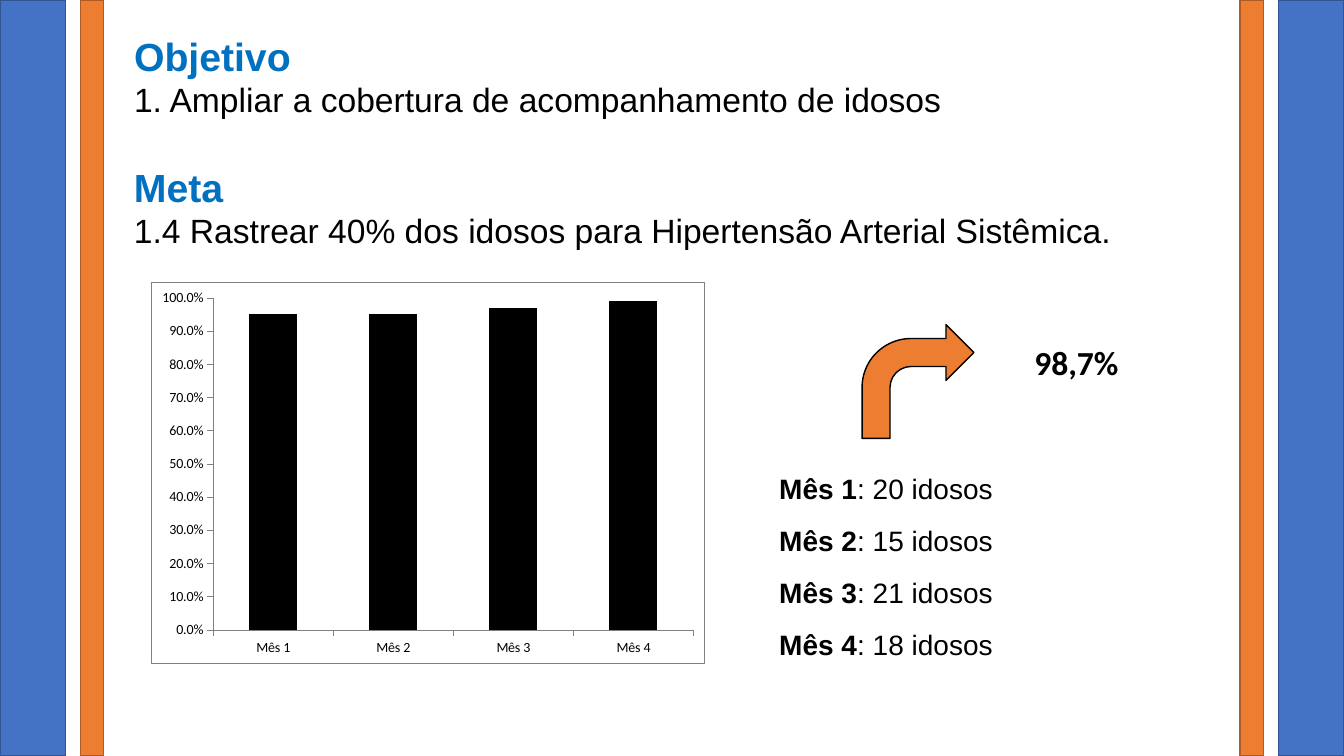
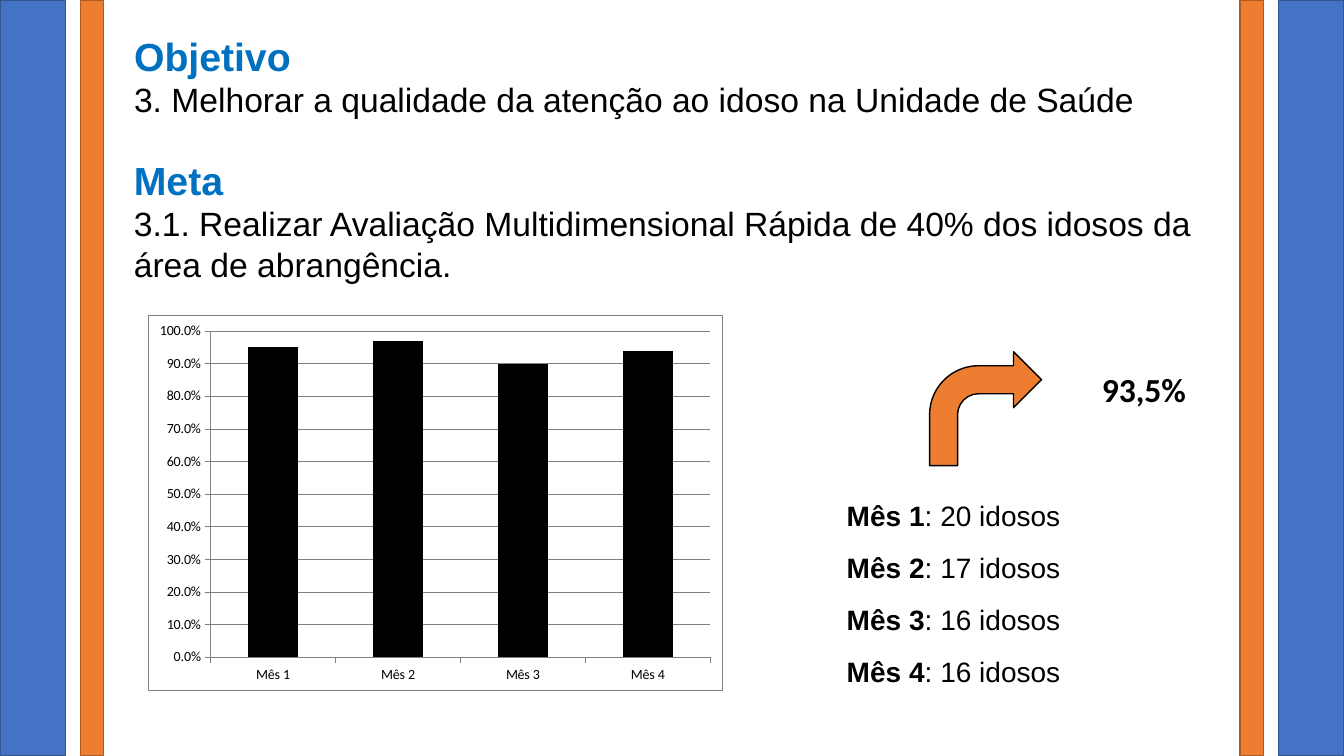
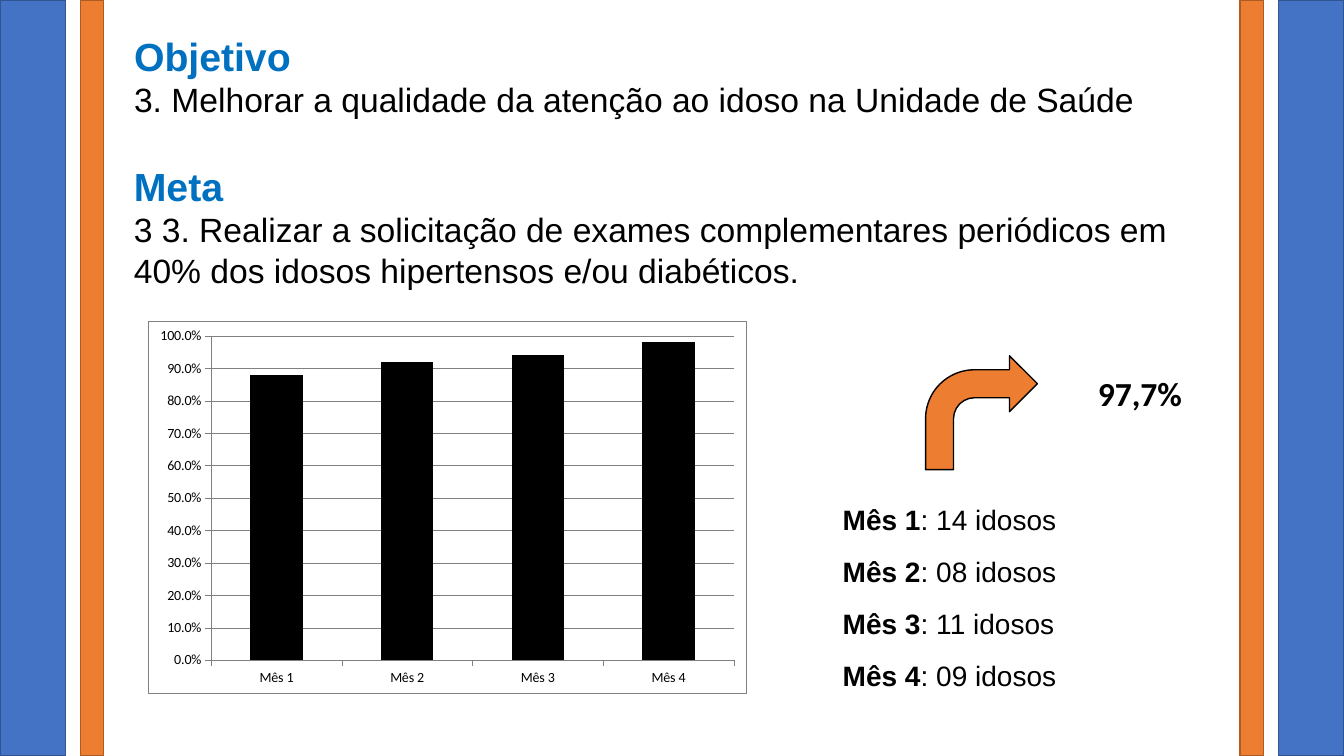
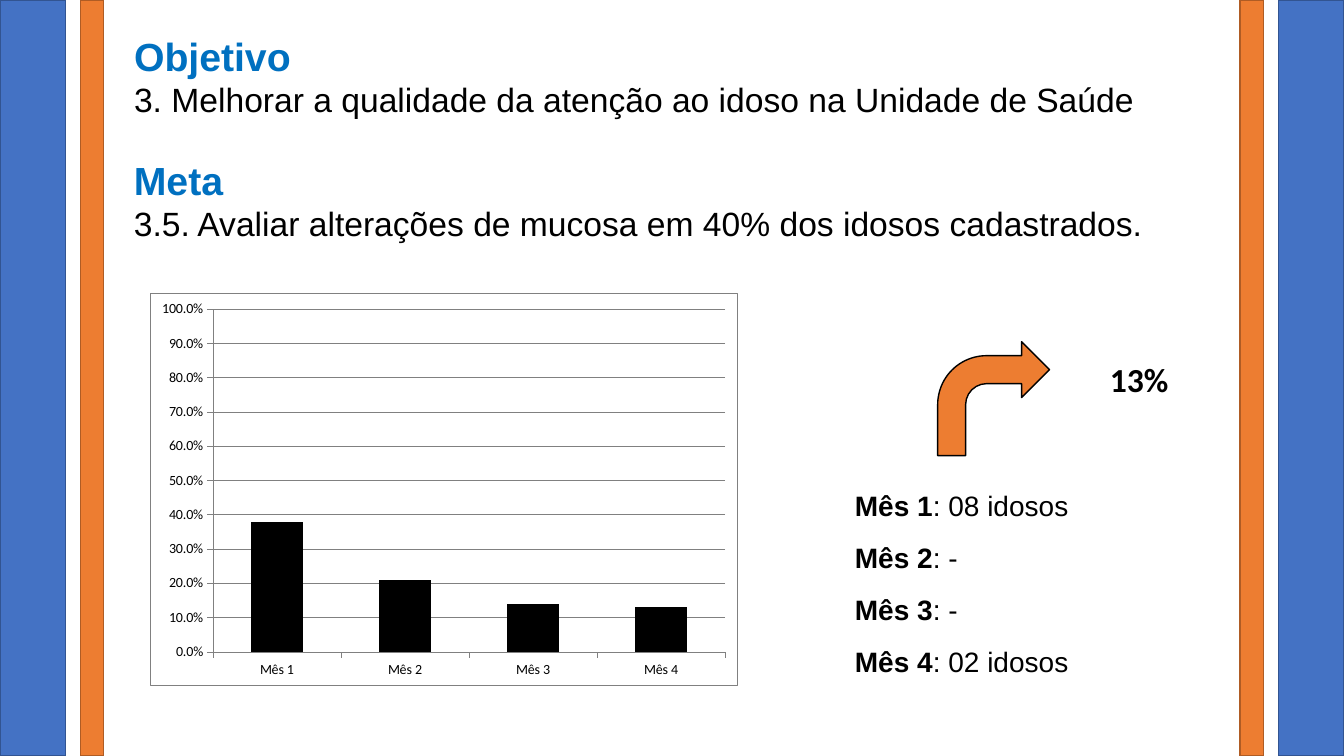
"""Build four slides on goals for elderly care, each with a chart and monthly counts."""
from dataclasses import dataclass

from pptx import Presentation
from pptx import util as u
from pptx.chart import data as chart_data
from pptx.dml import color
from pptx.enum import chart as chart_enum, shapes, text
from pptx.oxml import parse_xml

WIDTH, HEIGHT = 13.33, 7.5
BLUE, BLUE_EDGE = "4472C4", "325491"
ORANGE, ORANGE_EDGE = "ED7D31", "AF5C24"
HEADING, BLACK, WHITE, GRAY = "0070C0", "000000", "FFFFFF", "808080"
BODY_FONT, FIGURE_FONT = "Arial", "Calibri"
TEXT_LEFT, TEXT_WIDTH = 1.23, 10.9
BANDS = [(0, 0.65, BLUE, BLUE_EDGE), (0.8, 0.23, ORANGE, ORANGE_EDGE)]
MONTHS = ["Mês 1", "Mês 2", "Mês 3", "Mês 4"]
CHART_NS = "http://schemas.openxmlformats.org/drawingml/2006/chart"
DRAWING_NS = "http://schemas.openxmlformats.org/drawingml/2006/main"
QUALITY = "3. Melhorar a qualidade da atenção ao idoso na Unidade de Saúde"


@dataclass
class Goal:
    """Content and placement of one goal slide."""
    objective: str
    target: str
    target_place: tuple
    chart_place: tuple
    values: list
    result: str
    counts: list
    counts_at: tuple
    grid: bool = True


GOALS = [
    Goal("1. Ampliar a cobertura de acompanhamento de idosos",
         "1.4 Rastrear 40% dos idosos para Hipertensão Arterial Sistêmica.",
         (TEXT_LEFT, 1.57, 10.11, 0.98), (1.5, 2.8, 5.49, 3.78),
         [0.95, 0.95, 0.97, 0.99], "98,7%",
         ["20 idosos", "15 idosos", "21 idosos", "18 idosos"], (7.63, 4.63), grid=False),
    Goal(QUALITY,
         "3.1. Realizar Avaliação Multidimensional Rápida de 40% dos idosos da "
         "área de abrangência.",
         (TEXT_LEFT, 1.5, TEXT_WIDTH, 1.38), (1.47, 3.13, 5.69, 3.72),
         [0.95, 0.97, 0.9, 0.94], "93,5%",
         ["20 idosos", "17 idosos", "16 idosos", "16 idosos"], (8.3, 4.9)),
    Goal(QUALITY,
         "3 3. Realizar a solicitação de exames complementares periódicos em "
         "40% dos idosos hipertensos e/ou diabéticos.",
         (TEXT_LEFT, 1.56, TEXT_WIDTH, 1.38), (1.47, 3.18, 5.93, 3.7),
         [0.88, 0.92, 0.94, 0.98], "97,7%",
         ["14 idosos", "08 idosos", "11 idosos", "09 idosos"], (8.26, 4.94)),
    Goal(QUALITY,
         "3.5. Avaliar alterações de mucosa em 40% dos idosos cadastrados.",
         (TEXT_LEFT, 1.5, TEXT_WIDTH, 0.98), (1.49, 2.91, 5.82, 3.89),
         [0.38, 0.21, 0.14, 0.13], "13%",
         ["08 idosos", "-", "-", "02 idosos"], (8.38, 4.8)),
]


def rgb(value):
    """Turn a hex string into a colour."""
    return color.RGBColor.from_string(value)


def inches(place):
    """Turn numbers into lengths in inches."""
    return [u.Inches(number) for number in place]


def add_span(para, words, size=20, font=BODY_FONT, ink=BLACK, bold=False):
    """Add formatted text to a paragraph."""
    span = para.add_run()
    span.text = words
    span.font.size = u.Pt(size)
    span.font.name = font
    span.font.bold = bold
    span.font.color.rgb = rgb(ink)


def prepare_frame(box):
    """Make a box wrap its text from the top and return its frame."""
    frame = box.text_frame
    frame.word_wrap = True
    frame.auto_size = text.MSO_AUTO_SIZE.SHAPE_TO_FIT_TEXT
    frame.vertical_anchor = text.MSO_ANCHOR.TOP
    return frame


def add_box(page, place):
    """Add a text box and return its frame."""
    return prepare_frame(page.shapes.add_textbox(*inches(place)))


def write_section(frame, heading, body):
    """Write a blue heading with a line of body text below."""
    first, second = frame.paragraphs[0], frame.add_paragraph()
    first.alignment = second.alignment = text.PP_ALIGN.LEFT
    add_span(first, heading, size=28, ink=HEADING, bold=True)
    add_span(second, body, size=24)


def write_title(page, objective):
    """Place the title and fill it with the objective."""
    title = page.shapes.title
    title.left, title.top, title.width, title.height = inches(
        (TEXT_LEFT, 0.27, TEXT_WIDTH, 0.98))
    write_section(prepare_frame(title), "Objetivo", objective)


def add_figure(page, kind, place, fill, edge):
    """Add a filled and outlined preset shape."""
    figure = page.shapes.add_shape(kind, *inches(place))
    figure.shadow.inherit = False
    figure.fill.solid()
    figure.fill.fore_color.rgb = rgb(fill)
    figure.line.color.rgb = rgb(edge)
    figure.line.width = u.Pt(1)


def add_bands(page):
    """Add the vertical bands, mirrored on both sides."""
    for left, width, fill, edge in BANDS:
        for side in (left, WIDTH - left - width):
            add_figure(page, shapes.MSO_SHAPE.RECTANGLE, (side, 0, width, HEIGHT), fill, edge)


def add_counts(page, left, top, counts):
    """List the count of each month."""
    frame = add_box(page, (left, top, 2.57, 1.95))
    for index, (month, count) in enumerate(zip(MONTHS, counts)):
        para = frame.add_paragraph() if index else frame.paragraphs[0]
        para.space_before = u.Pt(13 if index else 0)
        add_span(para, month, bold=True)
        add_span(para, f": {count}")


def add_result(page, goal):
    """Add the arrow, the final percentage and the monthly counts."""
    left, top = goal.counts_at
    add_counts(page, left, top, goal.counts)
    frame = add_box(page, (left + 2.53, top - 1.29, 1.3, 0.5))
    add_span(frame.paragraphs[0], goal.result, size=24, font=FIGURE_FONT, bold=True)
    add_figure(page, shapes.MSO_SHAPE.BENT_ARROW,
               (left + 0.92, top - 1.41, 1.11, 1.13), ORANGE, BLACK)


def style_line(line):
    """Make a chart line thin and gray."""
    line.color.rgb = rgb(GRAY)
    line.width = u.Pt(0.25)


def frame_chart(chart):
    """Give the chart area a white fill and a thin gray border."""
    area = parse_xml(
        f'<c:spPr xmlns:c="{CHART_NS}" xmlns:a="{DRAWING_NS}">'
        f'<a:solidFill><a:srgbClr val="{WHITE}"/></a:solidFill>'
        f'<a:ln w="{u.Pt(0.25)}"><a:solidFill><a:srgbClr val="{GRAY}"/></a:solidFill></a:ln>'
        '</c:spPr>')
    chart.element.find(f"{{{CHART_NS}}}chart").addnext(area)


def add_month_chart(page, place, values, grid):
    """Add a column chart of the monthly percentages."""
    series_data = chart_data.CategoryChartData(number_format="0.0%")
    series_data.categories = MONTHS
    series_data.add_series("Series 1", values)
    chart = page.shapes.add_chart(
        chart_enum.XL_CHART_TYPE.COLUMN_CLUSTERED, *inches(place), series_data).chart
    chart.has_legend = False
    chart.has_title = False
    chart.font.size = u.Pt(10)
    chart.font.name = FIGURE_FONT
    chart.font.color.rgb = rgb(BLACK)
    frame_chart(chart)

    plot = chart.plots[0]
    plot.gap_width = 150
    plot.vary_by_categories = False
    columns = plot.series[0].format.fill
    columns.solid()
    columns.fore_color.rgb = rgb(BLACK)

    for axis in (chart.category_axis, chart.value_axis):
        axis.major_tick_mark = chart_enum.XL_TICK_MARK.OUTSIDE
        axis.minor_tick_mark = chart_enum.XL_TICK_MARK.NONE
        style_line(axis.format.line)
    scale = chart.value_axis
    scale.minimum_scale, scale.maximum_scale, scale.major_unit = 0, 1, 0.1
    scale.tick_labels.number_format = "0.0%"
    scale.tick_labels.number_format_is_linked = False
    scale.has_major_gridlines = grid
    if grid:
        style_line(scale.major_gridlines.format.line)


def add_goal_slide(deck, goal):
    """Add one slide for a goal."""
    page = deck.slides.add_slide(deck.slide_layouts[5])
    write_title(page, goal.objective)
    write_section(add_box(page, goal.target_place), "Meta", goal.target)
    add_bands(page)
    add_result(page, goal)
    add_month_chart(page, goal.chart_place, goal.values, goal.grid)


def main():
    """Build and save the deck."""
    deck = Presentation()
    deck.slide_width, deck.slide_height = inches((WIDTH, HEIGHT))
    for goal in GOALS:
        add_goal_slide(deck, goal)
    deck.save("out.pptx")


if __name__ == "__main__":
    main()
